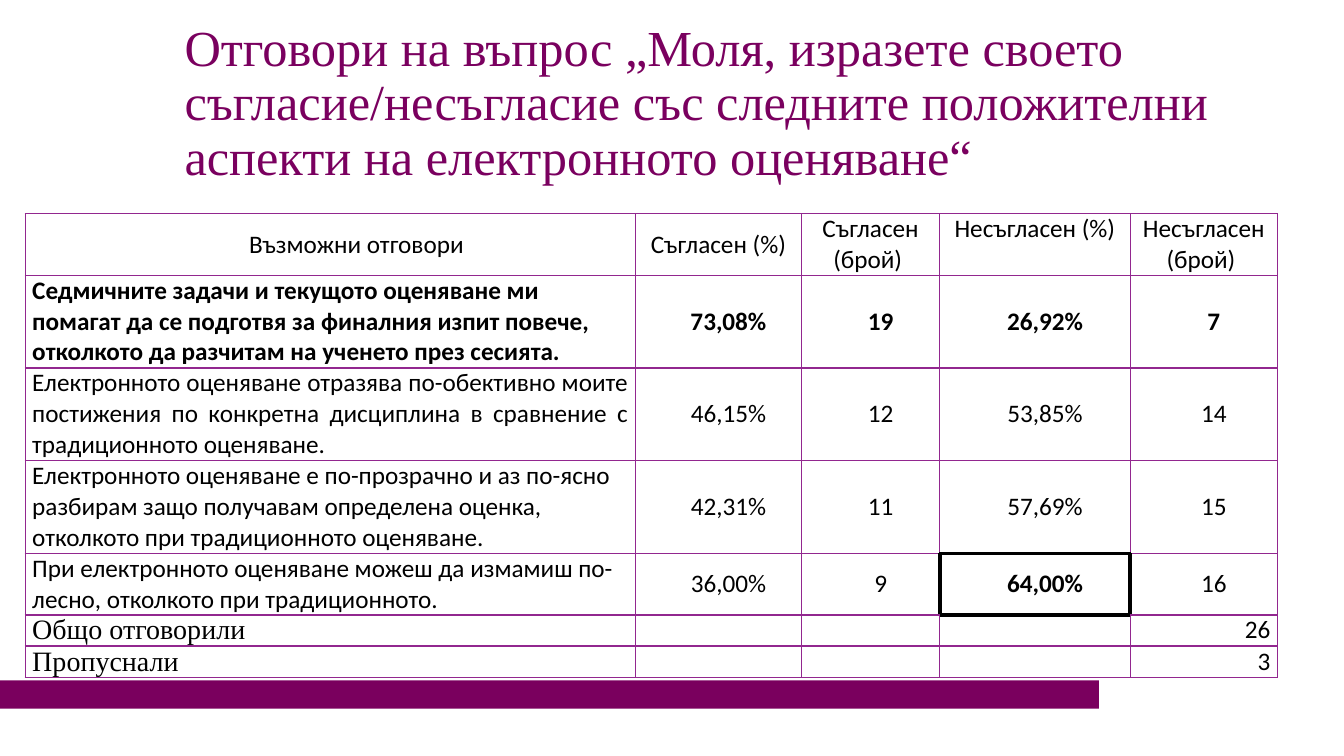
import pptx
import pptx.util
import pptx.dml.color
import pptx.enum.shapes
import pptx.enum.text
import pptx.oxml.ns
from lxml import etree

Inches = pptx.util.Inches
Pt = pptx.util.Pt
ALIGN = pptx.enum.text.PP_ALIGN
ANCHOR = pptx.enum.text.MSO_ANCHOR

COLORS = {"title": "7A005F", "bar": "7A005E", "grid": "92278F", "text": "000000"}
SANS, SERIF = "Calibri", "Times New Roman"

TITLE = ("Отговори на въпрос „Моля, изразете своето съгласие/несъгласие "
         "със следните положителни аспекти на електронното оценяване“")
COLUMN_WIDTHS = [6.05, 1.65, 1.37, 1.89, 1.46]
ROW_HEIGHTS = [0.61, 0.92, 0.92, 0.92, 0.61, 0.3, 0.3]
ROWS = [
    ["Възможни отговори", "Съгласен (%)", "Съгласен (брой) ",
     "Несъгласен (%)", "Несъгласен (брой) "],
    ["Седмичните задачи и текущото оценяване ми помагат да се подготвя за "
     "финалния изпит повече, отколкото да разчитам на ученето през сесията.",
     "73,08%", "19", "26,92%", "7"],
    ["Електронното оценяване отразява по-обективно моите постижения по "
     "конкретна дисциплина в сравнение с традиционното оценяване.",
     "46,15%", "12", "53,85%", "14"],
    ["Електронното оценяване е по-прозрачно и аз по-ясно разбирам защо "
     "получавам определена оценка, отколкото при традиционното оценяване.",
     "42,31%", "11", "57,69%", "15"],
    ["При електронното оценяване можеш да измамиш по-лесно, отколкото при "
     "традиционното.", "36,00%", "9", "64,00%", "16"],
    ["Общо отговорили", "", "", "", "26"],
    ["Пропуснали", "", "", "", "3"],
]
FIRST_TOTAL_ROW = 5
BOLD_ROW = 1
JUSTIFIED_ROW = 2
BOXED_CELL = (4, 3)
# Each side of a cell, with the step to its neighbour
SIDES = {"L": (0, -1), "R": (0, 1), "T": (-1, 0), "B": (1, 0)}


def rgb(name):
    return pptx.dml.color.RGBColor.from_string(COLORS[name])


def format_runs(paragraph, size, font, color, bold=False):
    for run in paragraph.runs:
        run.font.size = Pt(size)
        run.font.name = font
        run.font.bold = bold
        run.font.color.rgb = rgb(color)


def set_borders(cell, position):
    properties = cell._tc.get_or_add_tcPr()
    row, column = position
    for index, (side, (down, across)) in enumerate(SIDES.items()):
        heavy = BOXED_CELL in (position, (row + down, column + across))
        line = etree.Element(pptx.oxml.ns.qn("a:ln" + side), w=str(Pt(3 if heavy else 1)))
        fill = etree.SubElement(line, pptx.oxml.ns.qn("a:solidFill"))
        etree.SubElement(fill, pptx.oxml.ns.qn("a:srgbClr"),
                         val=COLORS["text" if heavy else "grid"])
        properties.insert(index, line)


def format_cell(cell, row, column):
    paragraph = cell.text_frame.paragraphs[0]
    is_total = row >= FIRST_TOTAL_ROW
    is_label = column == 0 and row > 0
    cell.margin_left = cell.margin_right = Inches(0.07)
    cell.margin_top = cell.margin_bottom = 0

    # Alignment and indents
    if is_label:
        paragraph.alignment = ALIGN.JUSTIFY if row == JUSTIFIED_ROW else ALIGN.LEFT
    else:
        paragraph.alignment = ALIGN.RIGHT if is_total else ALIGN.CENTER
    is_top = is_label or is_total or (row == 0 and column > 2)
    cell.vertical_anchor = ANCHOR.TOP if is_top else ANCHOR.MIDDLE
    indent = paragraph._p.get_or_add_pPr()
    if row == 0 and column == 0:
        indent.set("marL", str(Inches(0.52)))
    elif column > 0 and 0 < row <= FIRST_TOTAL_ROW:
        indent.set("indent", str(Inches(0.2)))

    # Font, fill and borders
    serif = is_total and is_label
    format_runs(paragraph, 20 if serif else 18, SERIF if serif else SANS, "text",
                row == BOLD_ROW or (row, column) == BOXED_CELL)
    cell.fill.background()
    set_borders(cell, (row, column))


def add_title(slide, left, top, width, height):
    title = slide.shapes.title
    title.left, title.top = Inches(left), Inches(top)
    title.width, title.height = Inches(width), Inches(height)
    frame = title.text_frame
    frame.text = TITLE
    frame.word_wrap = True
    frame.auto_size = pptx.enum.text.MSO_AUTO_SIZE.NONE
    frame.vertical_anchor = ANCHOR.MIDDLE
    paragraph = frame.paragraphs[0]
    paragraph.alignment = ALIGN.LEFT
    paragraph.line_spacing = 0.9
    format_runs(paragraph, 36, SERIF, "title")


def add_bar(slide, left, top, width, height):
    bar = slide.shapes.add_shape(pptx.enum.shapes.MSO_SHAPE.RECTANGLE, Inches(left),
                                 Inches(top), Inches(width), Inches(height))
    bar.shadow.inherit = False
    bar.fill.solid()
    bar.fill.fore_color.rgb = rgb("bar")
    bar.line.fill.background()


def add_answers_table(slide, left, top):
    frame = slide.shapes.add_table(len(ROWS), len(COLUMN_WIDTHS), Inches(left), Inches(top),
                                   Inches(sum(COLUMN_WIDTHS)), Inches(sum(ROW_HEIGHTS)))
    table = frame.table
    table.first_row = False
    table.horz_banding = False
    for column, width in zip(table.columns, COLUMN_WIDTHS):
        column.width = Inches(width)
    for row, height in zip(table.rows, ROW_HEIGHTS):
        row.height = Inches(height)
    for row, texts in enumerate(ROWS):
        for column, text in enumerate(texts):
            cell = table.cell(row, column)
            cell.text_frame.text = text
            format_cell(cell, row, column)


def main():
    presentation = pptx.Presentation()
    presentation.slide_width = Inches(13.33)
    presentation.slide_height = Inches(7.5)
    slide = presentation.slides.add_slide(presentation.slide_layouts[5])
    add_bar(slide, 0, 6.75, 10.9, 0.28)
    add_title(slide, 1.73, 0.31, 10.68, 1.45)
    add_answers_table(slide, 0.25, 2.12)
    presentation.save("out.pptx")


if __name__ == "__main__":
    main()
